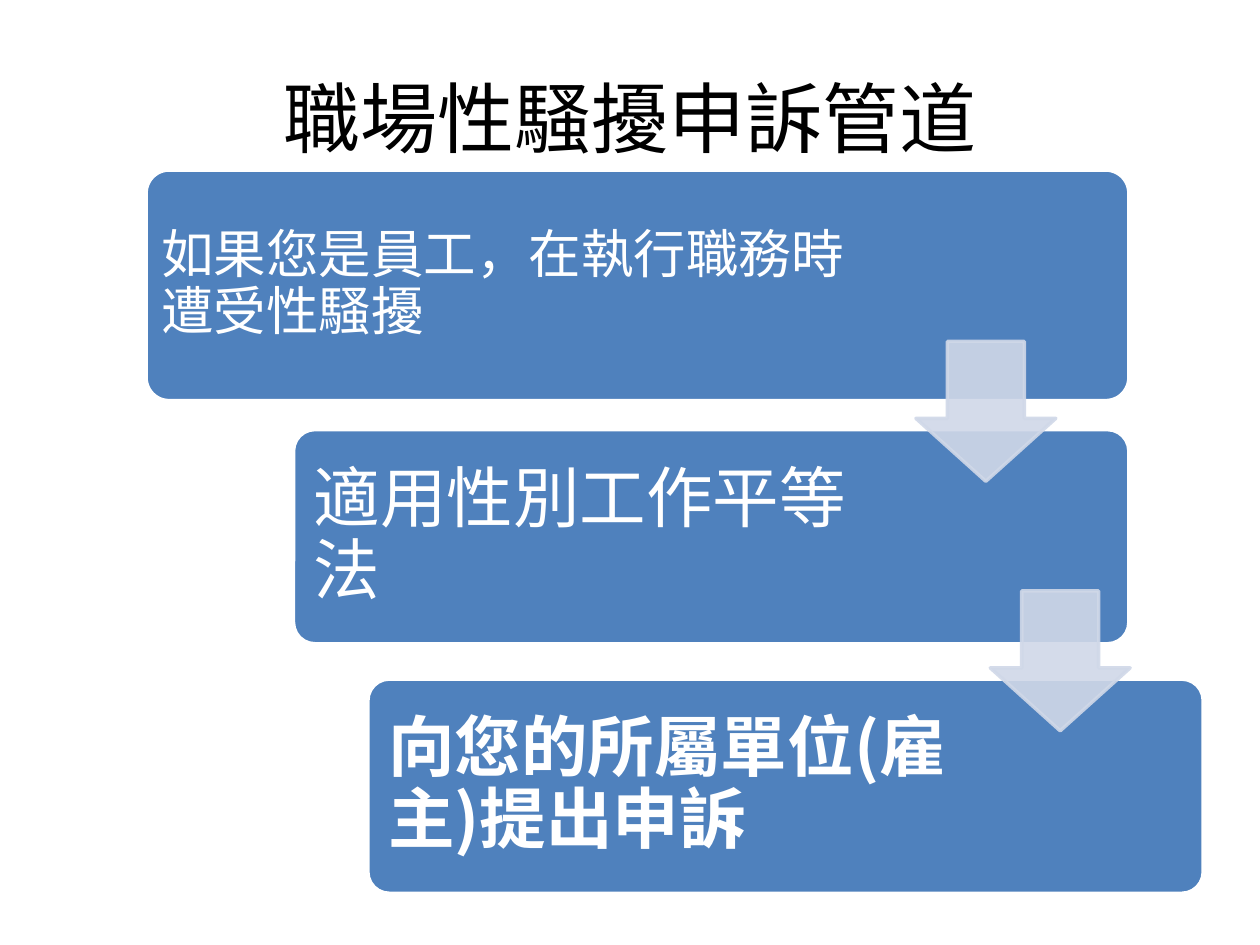
from lxml import etree
from pptx import Presentation
from pptx.dml.color import RGBColor
from pptx.enum.shapes import MSO_SHAPE
from pptx.enum.text import MSO_ANCHOR, PP_ALIGN
from pptx.oxml.ns import qn
from pptx.util import Inches, Pt

ROUNDED, DOWN_ARROW = MSO_SHAPE.ROUNDED_RECTANGLE, MSO_SHAPE.DOWN_ARROW
MIDDLE, LEFT, CENTER = MSO_ANCHOR.MIDDLE, PP_ALIGN.LEFT, PP_ALIGN.CENTER

FONT = "Noto Sans CJK SC"
BLACK = RGBColor(0x00, 0x00, 0x00)
WHITE = RGBColor(0xFF, 0xFF, 0xFF)
STEP_BLUE = RGBColor(0x4F, 0x81, 0xBD)
ARROW_GREY = RGBColor(0xD0, 0xD8, 0xE8)

SLIDE_W, SLIDE_H = 10, 7.5
TITLE_BOX = (0.5, 0.3, SLIDE_W - 1, 1.25)
ARROW_SIZE = 1.11
ARROW_RISE = 0.7  # how far an arrow starts above the step it points to
ARROW_ALPHA = 90

# wording, box, share of the box width for text, inset, size, bold
STEPS = [
    ("如果您是員工，在執行職務時遭受性騷擾",
     (1.16, 1.35, 7.8, 1.83), 0.737, 0.12, 30, False),
    ("適用性別工作平等法",
     (2.33, 3.41, 6.63, 1.7), 0.745, 0.16, 38, False),
    ("向您的所屬單位(雇主)提出申訴",
     (2.92, 5.39, 6.63, 1.7), 0.745, 0.16, 38, True),
]


def inches(box):
    return [Inches(length) for length in box]


def add_run(paragraph, wording, size, color, bold=False):
    run = paragraph.add_run()
    run.text = wording
    font = run.font
    font.name, font.size, font.bold = FONT, Pt(size), bold
    font.color.rgb = color
    east_asian = etree.SubElement(run._r.get_or_add_rPr(), qn("a:ea"))
    east_asian.set("typeface", FONT)


def add_filled(slide, preset, box, adjustments, fill, line):
    shape = slide.shapes.add_shape(preset, *inches(box))
    shape.shadow.inherit = False
    for index, value in enumerate(adjustments):
        shape.adjustments[index] = value
    shape.fill.solid()
    shape.fill.fore_color.rgb = fill
    shape.line.color.rgb = line
    shape.line.width = Pt(2)
    return shape


def add_title(slide, box, wording):
    title = slide.shapes.title
    title.left, title.top, title.width, title.height = inches(box)
    title.text_frame.vertical_anchor = MIDDLE
    heading = title.text_frame.paragraphs[0]
    heading.alignment = CENTER
    add_run(heading, wording, 44, BLACK)


def add_step(slide, box, wording, text_share, inset, size, bold):
    add_filled(slide, ROUNDED, box, [0.1], STEP_BLUE, WHITE)
    left, top, width, height = box
    label = slide.shapes.add_textbox(
        *inches((left, top, width * text_share, height)))
    frame = label.text_frame
    frame.word_wrap = True
    frame.vertical_anchor = MIDDLE
    frame.margin_left = frame.margin_right = Inches(inset)
    frame.margin_top = frame.margin_bottom = Inches(inset)
    sentence = frame.paragraphs[0]
    sentence.alignment = LEFT
    sentence.line_spacing = 0.9
    add_run(sentence, wording, size, WHITE, bold)


def add_arrow_to(slide, box, text_share):
    """Place an arrow that enters the step from above, right of its text."""
    left, top, width, _ = box
    arrow_box = (left + width * text_share, top - ARROW_RISE,
                 ARROW_SIZE, ARROW_SIZE)
    arrow = add_filled(slide, DOWN_ARROW, arrow_box, [0.55, 0.45],
                       ARROW_GREY, ARROW_GREY)
    # fill and outline are slightly see-through
    for color in arrow._element.spPr.iter(qn("a:srgbClr")):
        alpha = etree.SubElement(color, qn("a:alpha"))
        alpha.set("val", str(ARROW_ALPHA * 1000))


def main():
    deck = Presentation()
    deck.slide_width, deck.slide_height = Inches(SLIDE_W), Inches(SLIDE_H)
    slide = deck.slides.add_slide(deck.slide_layouts.get_by_name("Title Only"))

    add_title(slide, TITLE_BOX, "職場性騷擾申訴管道")
    # staircase of steps, then the arrows on top
    for wording, box, text_share, inset, size, bold in STEPS:
        add_step(slide, box, wording, text_share, inset, size, bold)
    for _, box, text_share, *_ in STEPS[1:]:
        add_arrow_to(slide, box, text_share)

    deck.save("out.pptx")


if __name__ == "__main__":
    main()
